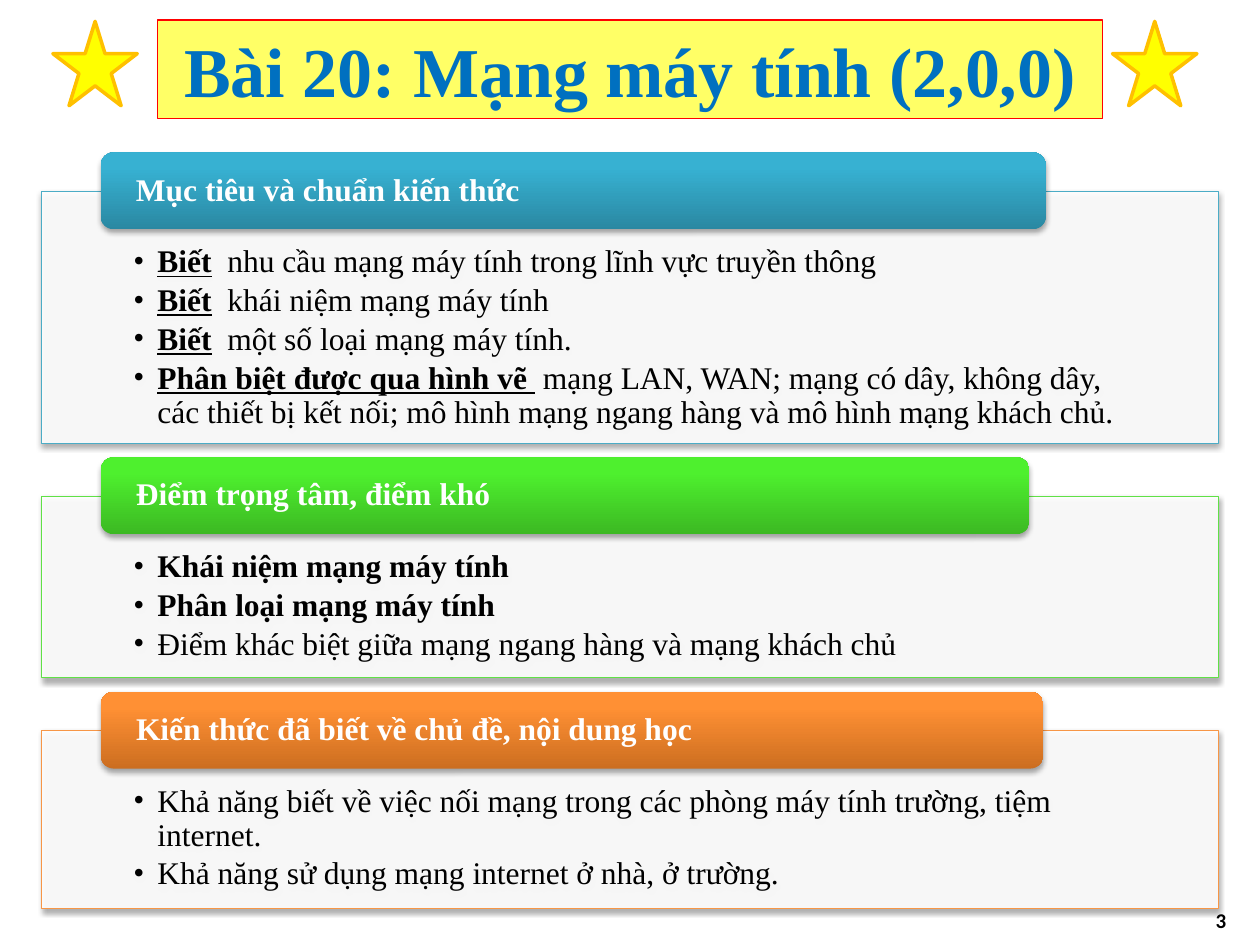
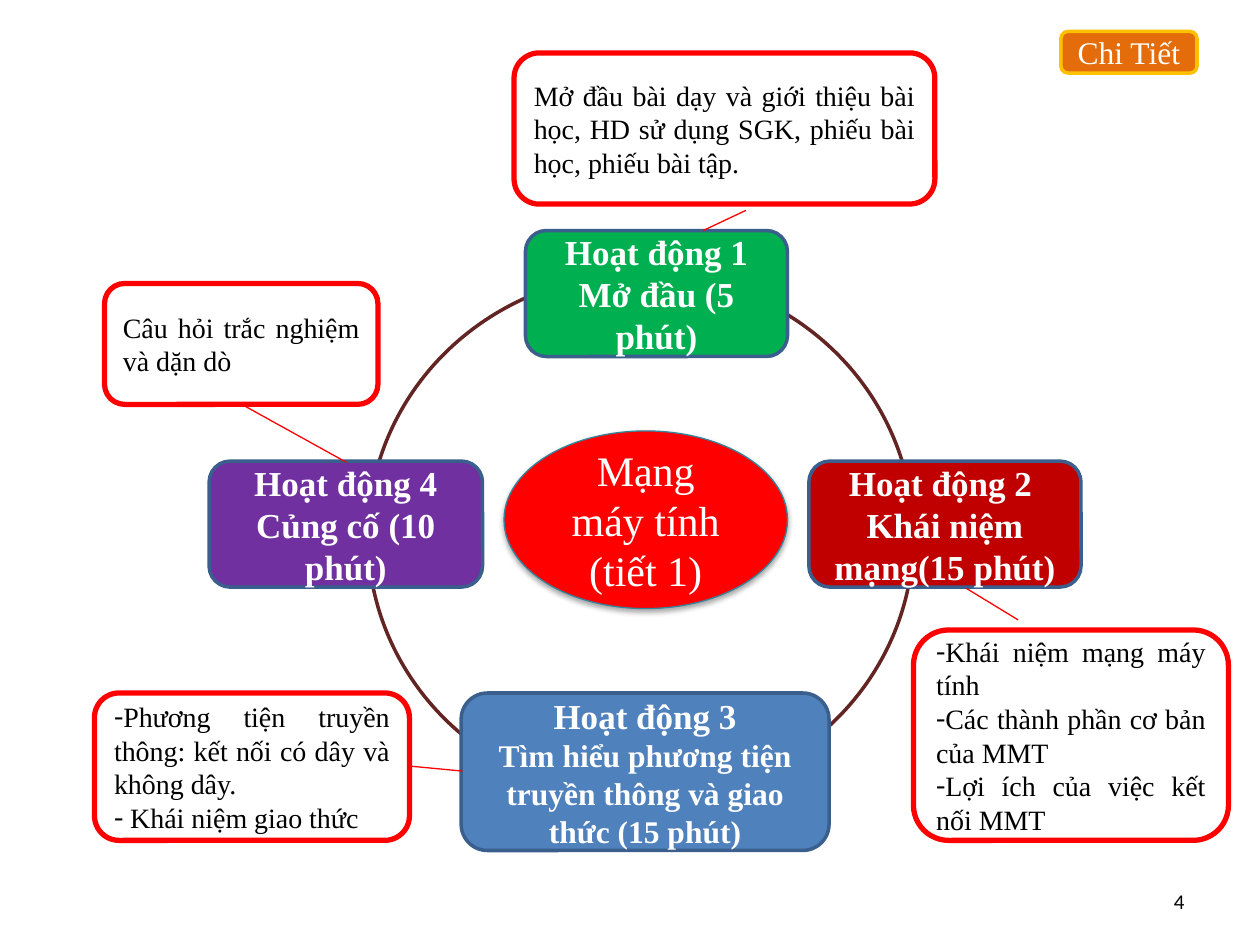
from pptx import Presentation
from pptx.dml.color import RGBColor
from pptx.enum.shapes import MSO_CONNECTOR as Link, MSO_SHAPE as Form
from pptx.enum.text import MSO_ANCHOR as Anchor, PP_ALIGN as Align
from pptx.oxml import parse_xml
from pptx.oxml.ns import nsdecls
from pptx.util import Inches, Pt
from lxml import etree

WHITE = RGBColor(0xFF, 0xFF, 0xFF)
BLACK = RGBColor(0x00, 0x00, 0x00)
RED = RGBColor(0xFF, 0x00, 0x00)
YELLOW = RGBColor(0xFF, 0xFF, 0x00)
LEMON = RGBColor(0xFF, 0xFF, 0x66)
GOLD = RGBColor(0xFF, 0xC0, 0x00)
BLUE = RGBColor(0x00, 0x70, 0xC0)
STEEL = RGBColor(0x4F, 0x81, 0xBD)
NAVY = RGBColor(0x3A, 0x5F, 0x8C)
GREEN = RGBColor(0x00, 0xB0, 0x50)
CRIMSON = RGBColor(0xC0, 0x00, 0x00)
PURPLE = RGBColor(0x70, 0x30, 0xA0)
ORANGE = RGBColor(0xE4, 0x6C, 0x0A)
MAROON = RGBColor(0x63, 0x25, 0x23)
TEAL = RGBColor(0x31, 0x85, 0x9C)

# Panel themes: edge, dark end and light end of the tab
AQUA = (RGBColor(0x4B, 0xAC, 0xC6), RGBColor(0x2A, 0x88, 0xA2), RGBColor(0x37, 0xB1, 0xD2))
LIME = (RGBColor(0x60, 0xE1, 0x46), RGBColor(0x3C, 0xB9, 0x23), RGBColor(0x4E, 0xF0, 0x2E))
AMBER = (RGBColor(0xF7, 0x96, 0x46), RGBColor(0xCC, 0x6E, 0x20), RGBColor(0xFF, 0x90, 0x34))

SERIF, SANS = "Times New Roman", "Calibri"
SHADOW = (f'<a:effectLst {nsdecls("a")}><a:outerShdw blurRad="40000" dist="23000" '
          'dir="5400000" rotWithShape="0"><a:srgbClr val="000000"><a:alpha val="35000"/>'
          '</a:srgbClr></a:outerShdw></a:effectLst>')
NO_SHADOW = f'<a:effectLst {nsdecls("a")}/>'


class Deck:
    def __init__(self):
        self.prs = Presentation()
        self.prs.slide_width, self.prs.slide_height = Inches(10), Inches(7.5)
        self.slide = None

    def page(self):
        self.slide = self.prs.slides.add_slide(self.prs.slide_layouts[6])

    def shape(self, form, at, fill=None, line=None, width=0.75, shadow=False):
        item = self.slide.shapes.add_shape(form, *map(Inches, at))
        item.shadow.inherit = False
        if fill is None:
            item.fill.background()
        else:
            item.fill.solid()
            item.fill.fore_color.rgb = fill
        if line is None:
            item.line.fill.background()
        else:
            item.line.color.rgb = line
            item.line.width = Pt(width)
        if shadow:
            props = item._element.spPr
            props.remove(props.find("{*}effectLst"))
            props.append(parse_xml(SHADOW))
        return item

    def style(self, run, size, color, bold=False, line=False, face=SERIF):
        font = run.font
        font.name, font.size, font.bold, font.underline = face, Pt(size), bold, line
        font.color.rgb = color

    def text(self, item, lines, size, color, bold=False, align=Align.CENTER,
             sizes=None, face=SERIF):
        frame = item.text_frame
        frame.word_wrap = True
        frame.vertical_anchor = Anchor.MIDDLE
        frame.text = "\n".join(lines)
        for num, par in enumerate(frame.paragraphs):
            par.alignment = align
            for run in par.runs:
                self.style(run, sizes[num] if sizes else size, color, bold, face=face)
        return frame

    def inset(self, frame, left, top, right, bottom):
        frame.margin_left, frame.margin_top = Inches(left), Inches(top)
        frame.margin_right, frame.margin_bottom = Inches(right), Inches(bottom)

    def bullet(self, par, mark, indent=0):
        props = par._p.get_or_add_pPr()
        props.set("marL", str(Inches(indent)))
        props.set("indent", str(-Inches(indent)))
        etree.SubElement(props, props.tag.replace("pPr", "buFont"), typeface=SERIF)
        etree.SubElement(props, props.tag.replace("pPr", "buChar"), char=mark)

    def panel(self, top, high, wide, theme, title, items):
        """Bordered list with a tab on its top edge; items are (lead, rest, underline)."""
        edge, dark, light = theme
        box = self.shape(Form.RECTANGLE, (0.33, top, 9.34, high), WHITE, edge, shadow=True)
        color = box._element.spPr.find("{*}solidFill")[0]
        etree.SubElement(color, color.tag.replace("srgbClr", "alpha"), val="90000")
        frame = self.text(box, [lead for lead, _, _ in items], 18, BLACK, align=Align.LEFT)
        frame.vertical_anchor = Anchor.TOP
        self.inset(frame, 0.73, 0.43, 0.72, 0.14)
        for par, (lead, rest, line) in zip(frame.paragraphs, items):
            par.line_spacing, par.space_after = 0.9, Pt(2.7)
            self.bullet(par, "•", 0.19)
            for run in par.runs:
                self.style(run, 18, BLACK, True, line)
            if rest:
                run = par.add_run()
                run.text = rest
                self.style(run, 18, BLACK)
        # Tab
        tab = self.shape(Form.ROUNDED_RECTANGLE, (0.8, top - 0.31, wide, 0.61), dark, shadow=True)
        tab.fill.gradient()
        tab.fill.gradient_angle = 90
        for stop, tone, pos in zip(tab.fill.gradient_stops, (dark, light), (0, 0.8)):
            stop.color.rgb, stop.position = tone, pos
        label = self.text(tab, [title], 18, WHITE, True, Align.LEFT)
        label.paragraphs[0].line_spacing = 0.9
        self.inset(label, 0.25, 0, 0.25, 0)

    def step(self, at, fill, lines, sizes=None):
        box = self.shape(Form.ROUNDED_RECTANGLE, at, fill, NAVY, 2)
        self.text(box, lines, 20, WHITE, True, sizes=sizes)

    def note(self, at, lines, mark=None):
        box = self.shape(Form.ROUNDED_RECTANGLE, at, WHITE, RED, 3)
        frame = self.text(box, lines, 16, BLACK, align=Align.JUSTIFY)
        if mark:
            for par in frame.paragraphs:
                self.bullet(par, mark)

    def link(self, *ends):
        line = self.slide.shapes.add_connector(Link.STRAIGHT, *map(Inches, ends))
        line.line.color.rgb, line.line.width = RED, Pt(0.75)
        line._element.spPr.append(parse_xml(NO_SHADOW))

    def number(self, left, top, value, bold=False):
        box = self.slide.shapes.add_textbox(*map(Inches, (left, top, 2.33, 0.4)))
        self.text(box, [value], 12, BLACK, bold, Align.RIGHT, face=SANS)


def goals(deck):
    deck.page()
    # Panels
    deck.panel(1.52, 2, 7.5, AQUA, "Mục tiêu và chuẩn kiến thức", [
        ("Biết", "  nhu cầu mạng máy tính trong lĩnh vực truyền thông", True),
        ("Biết", "  khái niệm mạng máy tính", True),
        ("Biết", "  một số loại mạng máy tính.", True),
        ("Phân biệt được qua hình vẽ ", " mạng LAN, WAN; mạng có dây, không dây, "
         "các thiết bị kết nối; mô hình mạng ngang hàng và mô hình mạng khách chủ.", True)])
    deck.panel(3.94, 1.44, 7.37, LIME, "Điểm trọng tâm, điểm khó", [
        ("Khái niệm mạng máy tính", "", False),
        ("Phân loại mạng máy tính", "", False),
        ("", "Điểm khác biệt giữa mạng ngang hàng và mạng khách chủ", False)])
    deck.panel(5.8, 1.41, 7.48, AMBER, "Kiến thức đã biết về chủ đề, nội dung học", [
        ("", "Khả năng biết về việc nối mạng trong các phòng máy tính trường, "
         "tiệm internet.", False),
        ("", "Khả năng sử dụng mạng internet ở nhà, ở trường.", False)])
    # Title between two stars
    title = deck.shape(Form.RECTANGLE, (1.25, 0.16, 7.5, 0.78), LEMON, RED)
    deck.text(title, ["Bài 20: Mạng máy tính (2,0,0)"], 40, BLUE, True)
    for left in (8.83, 0.42):
        deck.shape(Form.STAR_5_POINT, (left, 0.17, 0.67, 0.67), YELLOW, GOLD, 2)
    deck.number(7.5, 7.1, "3", True)


def cycle(deck):
    deck.page()
    # Topic and ring
    topic = deck.shape(Form.OVAL, (4, 3.42, 2.25, 1.41), RED, TEAL, shadow=True)
    deck.text(topic, ["Mạng máy tính (tiết 1)"], 24, WHITE)
    deck.shape(Form.OVAL, (2.92, 2.17, 4.33, 4.17), line=MAROON, width=2)
    # Steps on the ring
    deck.step((4.17, 1.83, 2.08, 1), GREEN, ["Hoạt động 1", "Mở đầu (5 phút)"])
    deck.step((6.42, 3.66, 2.16, 1), CRIMSON, ["Hoạt động 2 ", "Khái niệm mạng(15 phút)"])
    deck.step((3.66, 5.5, 2.92, 1.25), STEEL, [
        "Hoạt động 3", "Tìm hiểu phương tiện truyền thông và giao thức (15 phút)"], (20, 18))
    deck.step((1.66, 3.66, 2.17, 1), PURPLE, ["Hoạt động 4", "Củng cố (10 phút)"])
    # Notes and their links
    deck.note((4.08, 0.42, 3.34, 1.2), [
        "Mở đầu bài dạy và giới thiệu bài học, HD sử dụng SGK, phiếu bài học, phiếu bài tập."])
    deck.note((7.25, 5, 2.5, 1.67), [
        "Khái niệm mạng máy tính", "Các thành phần cơ bản của MMT",
        "Lợi ích của việc kết nối MMT"], "-")
    deck.note((0.75, 5.5, 2.5, 1.17), [
        "Phương tiện truyền thông: kết nối có dây và không dây.", " Khái niệm giao thức"], "-")
    deck.note((0.83, 2.25, 2.17, 0.96), ["Câu hỏi trắc nghiệm và dặn dò"])
    for ends in ((5.58, 1.83, 5.92, 1.67), (7.67, 4.67, 8.08, 4.92),
                 (3.67, 6.12, 3.25, 6.08), (2.75, 3.67, 1.92, 3.21)):
        deck.link(*ends)
    # Detail button
    button = deck.shape(Form.ROUNDED_RECTANGLE, (8.42, 0.25, 1.08, 0.33), ORANGE, GOLD, 2)
    deck.text(button, ["Chi Tiết"], 18, WHITE)
    deck.number(7.17, 6.95, "4")


def main():
    deck = Deck()
    goals(deck)
    cycle(deck)
    deck.prs.save("out.pptx")


if __name__ == "__main__":
    main()
